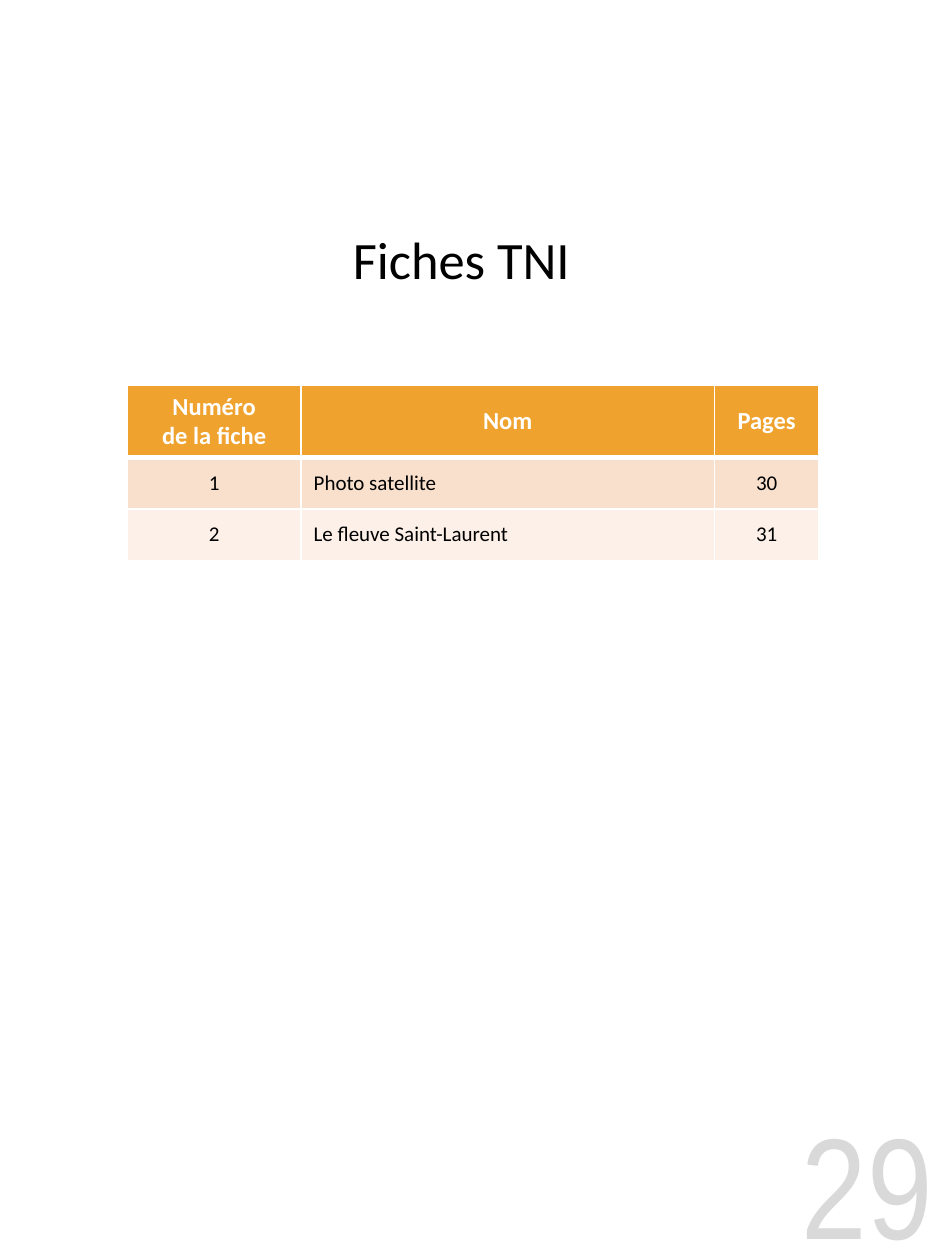
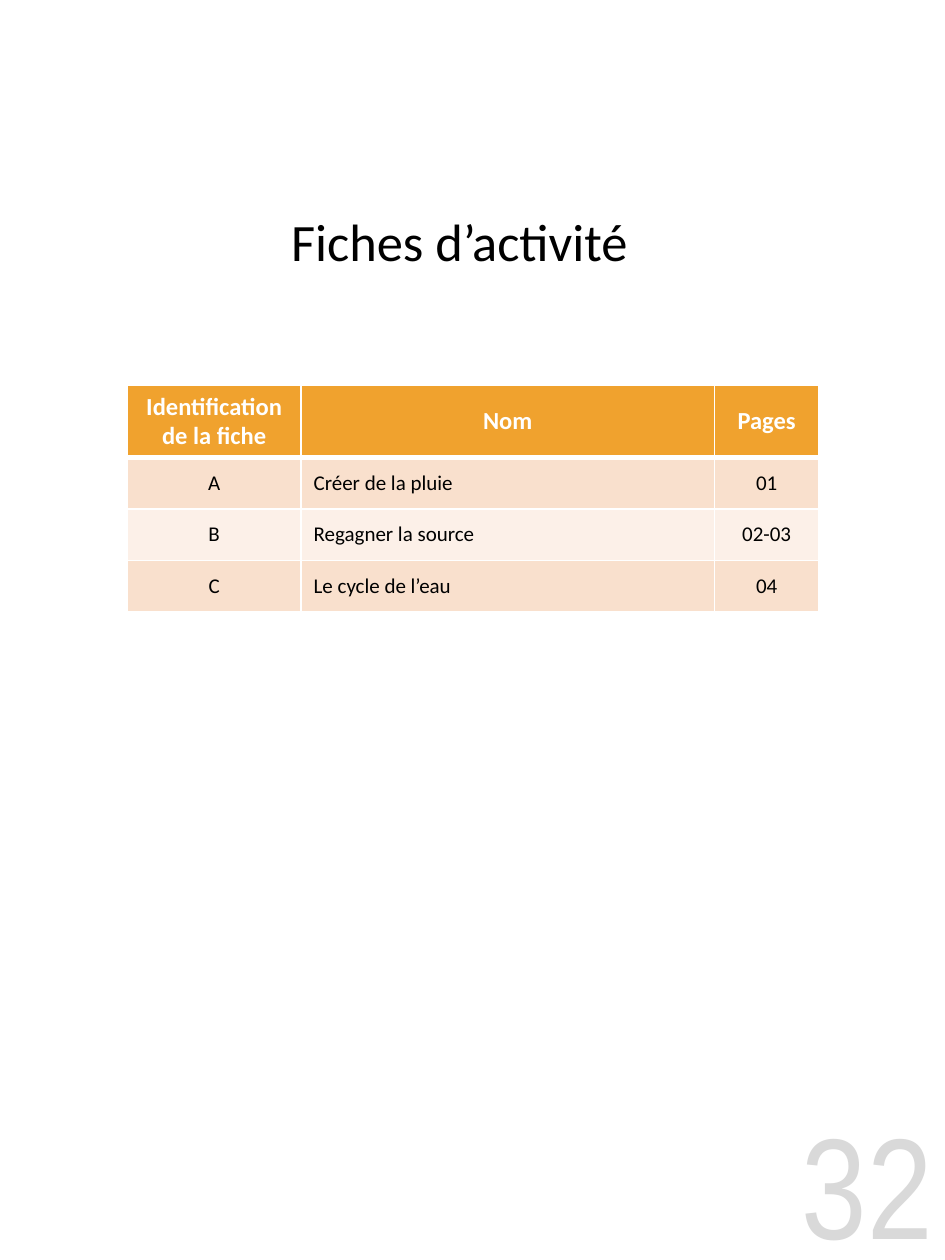
from lxml import etree
from pptx import Presentation
from pptx import util as u
from pptx.dml.color import RGBColor
from pptx.enum import text
from pptx.oxml import ns

WHITE = RGBColor(0xFF, 0xFF, 0xFF)
BLACK = RGBColor(0, 0, 0)
ORANGE = RGBColor(0xF0, 0xA2, 0x2E)
PEACH = RGBColor(0xF9, 0xE0, 0xCD)
CREAM = RGBColor(0xFC, 0xF0, 0xE8)
PALE_GREY = RGBColor(0xD9, 0xD9, 0xD9)

CENTER, LEFT, RIGHT = (text.PP_ALIGN.CENTER, text.PP_ALIGN.LEFT,
                       text.PP_ALIGN.RIGHT)
TITLE_STYLE = {"name": "Calibri", "size": u.Pt(30), "bold": False}
HEADER_STYLE = {"name": "Calibri", "size": u.Pt(14), "bold": True}
BODY_STYLE = {"name": "Calibri", "size": u.Pt(12), "bold": False}
NUMBER_STYLE = {"name": "Arial Narrow", "size": u.Pt(82), "bold": False}

NUMBER_BOX = (5.79, 8.76, 1.71, 1.24)
INDEX_BOX = (1.01, 3.06, 5.49)
COLUMN_WIDTHS = (1.38, 3.28, 0.83)
HEADER_HEIGHT, ROW_HEIGHT = 0.57, 0.41

SECTIONS = [
    {"title": "Fiches TNI", "title_box": (2.7, 1.75, 1.94, 0.61),
     "page": "29",
     "rows": [("Numéro\nde la fiche", "Nom", "Pages"),
              ("1", "Photo satellite", "30"),
              ("2", "Le fleuve Saint-Laurent", "31")]},
    {"title": "Fiches d’activité", "title_box": (2.21, 1.61, 3, 0.61),
     "page": "32",
     "rows": [("Identification\nde la fiche", "Nom", "Pages"),
              ("A", "Créer de la pluie", "01"),
              ("B", "Regagner la source", "02-03"),
              ("C", "Le cycle de l’eau", "04")]},
]


def write(frame, words, style, color, align):
    """Fill a text frame with one paragraph per line of words."""
    frame.text = words
    for line in frame.paragraphs:
        line.alignment = align
        for attribute, value in style.items():
            setattr(line.font, attribute, value)
        line.font.color.rgb = color


def border(cell, widths):
    """Draw white cell borders from a mapping of side to points."""
    properties = cell._tc.get_or_add_tcPr()
    for side, points in widths.items():
        edge = etree.SubElement(properties, ns.qn(f"a:ln{side}"),
                                w=str(u.Pt(points)))
        fill = etree.SubElement(edge, ns.qn("a:solidFill"))
        etree.SubElement(fill, ns.qn("a:srgbClr"), val=str(WHITE))


def add_title(slide, box, words):
    """Place and format the title placeholder in its box."""
    title = slide.shapes.title
    for side, length in zip(("left", "top", "width", "height"), box):
        setattr(title, side, u.Inches(length))
    frame = title.text_frame
    frame.auto_size = text.MSO_AUTO_SIZE.NONE
    frame.word_wrap = True
    frame.vertical_anchor = text.MSO_ANCHOR.TOP
    write(frame, words, TITLE_STYLE, BLACK, LEFT)


def add_page_number(slide, box, number):
    """Place the large page number in its box."""
    frame = slide.shapes.add_textbox(*map(u.Inches, box)).text_frame
    frame.word_wrap = True
    frame.vertical_anchor = text.MSO_ANCHOR.MIDDLE
    write(frame, number, NUMBER_STYLE, PALE_GREY, RIGHT)


def format_cell(cell, words, row, column):
    """Write and colour one cell according to its place in the index."""
    header = row == 0
    border(cell, {"L": 1, "R": 1, "T": 3 if row == 1 else 1,
                  "B": 3 if header else 1})
    cell.fill.solid()
    cell.fill.fore_color.rgb = (ORANGE if header
                                else PEACH if row % 2 else CREAM)
    cell.vertical_anchor = text.MSO_ANCHOR.MIDDLE
    write(cell.text_frame, words, HEADER_STYLE if header else BODY_STYLE,
          WHITE if header else BLACK,
          LEFT if column == 1 and not header else CENTER)


def add_index(slide, box, rows):
    """Build the table of sheets inside its box."""
    left, top, width = box
    height = HEADER_HEIGHT + ROW_HEIGHT * (len(rows) - 1)
    index = slide.shapes.add_table(
        len(rows), len(COLUMN_WIDTHS),
        *map(u.Inches, (left, top, width, height))).table
    for column, column_width in zip(index.columns, COLUMN_WIDTHS):
        column.width = u.Inches(column_width)
    for r, entries in enumerate(rows):
        index.rows[r].height = u.Inches(ROW_HEIGHT if r else HEADER_HEIGHT)
        for c, words in enumerate(entries):
            format_cell(index.cell(r, c), words, r, c)


def add_section(deck, section):
    """Add a section slide with its page number, index and title."""
    slide = deck.slides.add_slide(deck.slide_layouts[5])
    add_page_number(slide, NUMBER_BOX, section["page"])
    add_index(slide, INDEX_BOX, section["rows"])
    add_title(slide, section["title_box"], section["title"])


def main():
    """Build and save the deck."""
    deck = Presentation()
    deck.slide_width, deck.slide_height = u.Inches(7.5), u.Inches(10)
    for section in SECTIONS:
        add_section(deck, section)
    deck.save("out.pptx")


if __name__ == "__main__":
    main()
